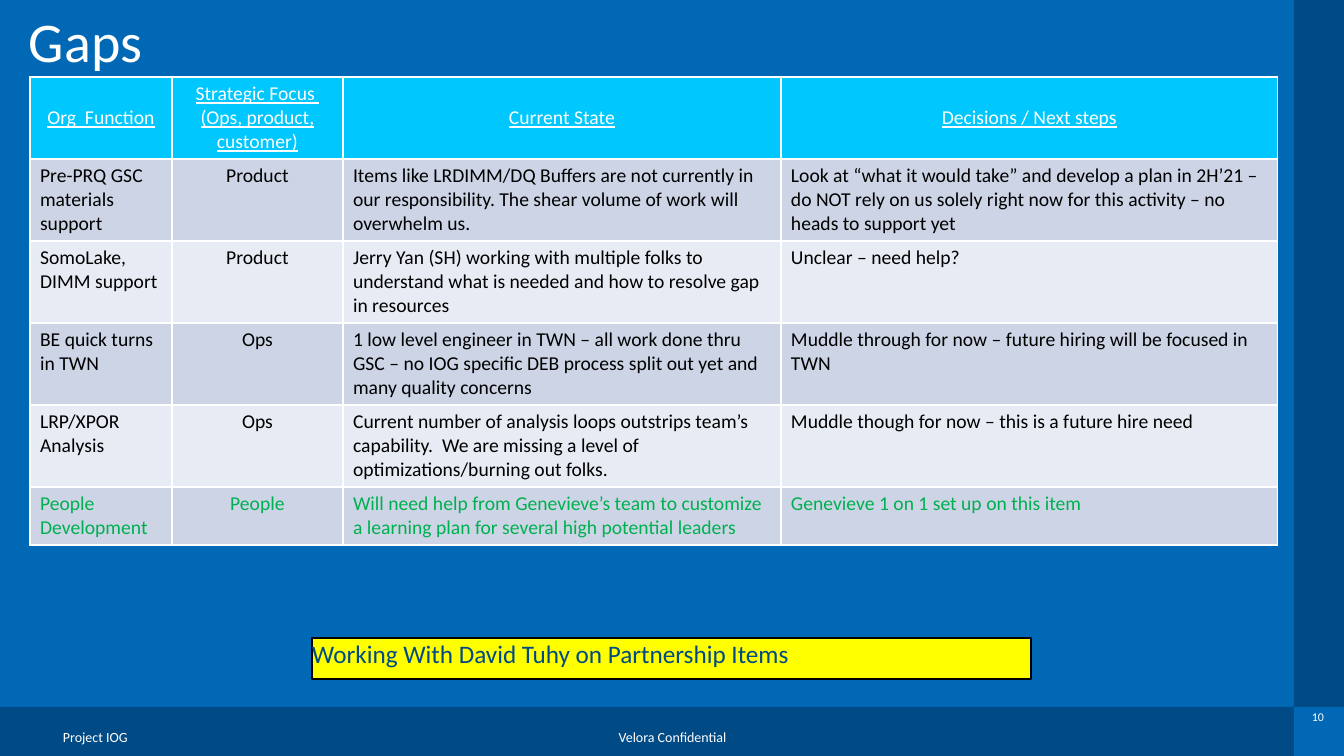
from lxml.etree import SubElement
from pptx import Presentation
from pptx.dml.color import RGBColor
from pptx.enum.shapes import MSO_SHAPE as Shape
from pptx.enum.text import MSO_ANCHOR as Anchor, PP_ALIGN as Align
from pptx.oxml.ns import qn
from pptx.util import Pt

PX = 12192000 / 1344
BLUE, NAVY, WHITE, BLACK, GREEN = "0068B5", "004A86", "FFFFFF", "000000", "00B050"


def color(code):
    return RGBColor.from_string(code)


def write(frame, words, size, ink, align=Align.LEFT, underline=None):
    line = frame.paragraphs[0]
    line.alignment = align
    run = line.add_run()
    run.text = words
    run.font.name = "Calibri"
    run.font.size = Pt(size)
    run.font.color.rgb = color(ink)
    run.font.underline = underline
    return line


deck = Presentation()
deck.slide_width, deck.slide_height = round(1344 * PX), round(756 * PX)
slide = deck.slides.add_slide(deck.slide_layouts[6])
slide.background.fill.solid()
slide.background.fill.fore_color.rgb = color(BLUE)

panels = [
    (0, 707, 1294, 49, NAVY),
    (1294, 707, 50, 49, BLUE),
    (1294, 0, 50, 707, NAVY),
    (312, 638, 719, 41, "FFFF00"),
]
for *box, tint in panels:
    panel = slide.shapes.add_shape(Shape.RECTANGLE, *[round(v * PX) for v in box])
    panel.shadow.inherit = False
    panel.fill.solid()
    panel.fill.fore_color.rgb = color(tint)
    panel.line.fill.background()

partnership = panel
partnership.line.color.rgb = color(BLACK)
partnership.line.width = Pt(1)

labels = [
    ("10", 1309, 692, 23, 51, 8.5, Align.LEFT, Anchor.MIDDLE, 3, True, 0.9),
    ("Velora Confidential", 599, 724, 147, 25, 10, Align.CENTER, Anchor.TOP, None, False, None),
    ("Project IOG", 53, 724, 94, 25, 10, Align.LEFT, Anchor.TOP, None, False, None),
    ("Gaps", 29, 14, 1215, 71, 40, Align.LEFT, Anchor.TOP, 0, True, 0.9),
]
frames = [(partnership.text_frame, 0, Anchor.TOP, True)]
write(partnership.text_frame, "Working With David Tuhy on Partnership Items", 18, NAVY)
for words, x, y, w, h, size, align, anchor, inset, wrap, spacing in labels:
    label = slide.shapes.add_textbox(*[round(v * PX) for v in (x, y, w, h)])
    write(label.text_frame, words, size, WHITE, align).line_spacing = spacing
    frames.append((label.text_frame, inset, anchor, wrap))

for frame, inset, anchor, wrap in frames:
    frame.word_wrap = wrap
    frame.vertical_anchor = anchor
    if inset is not None:
        frame.margin_left = frame.margin_right = round(inset * PX)
        frame.margin_top = frame.margin_bottom = round(inset * PX)

gaps = [
    ("Org  Function", "Strategic Focus  (Ops, product, customer)", "Current State",
     "Decisions / Next steps"),
    ("Pre-PRQ GSC materials support", "Product",
     "Items like LRDIMM/DQ Buffers are not currently in our responsibility. "
     "The shear volume of work will overwhelm us.",
     "Look at “what it would take” and develop a plan in 2H’21 – do NOT rely on us "
     "solely right now for this activity – no heads to support yet"),
    ("SomoLake, DIMM support", "Product",
     "Jerry Yan (SH) working with multiple folks to understand what is needed "
     "and how to resolve gap in resources",
     "Unclear – need help?"),
    ("BE quick turns in TWN", "Ops",
     "1 low level engineer in TWN – all work done thru GSC – no IOG specific DEB "
     "process split out yet and many quality concerns",
     "Muddle through for now – future hiring will be focused in TWN"),
    ("LRP/XPOR Analysis", "Ops",
     "Current number of analysis loops outstrips team’s capability.  We are missing "
     "a level of optimizations/burning out folks.",
     "Muddle though for now – this is a future hire need"),
    ("People Development", "People",
     "Will need help from Genevieve’s team to customize a learning plan for several "
     "high potential leaders",
     "Genevieve 1 on 1 set up on this item"),
]
widths = [142, 171, 438, 497]
heights = [82, 82, 82, 82, 82, 58]
bands = ["E7EBF3", "CCD4E5"]
inks = [WHITE] + [BLACK] * 4 + [GREEN]

grid = slide.shapes.add_table(
    len(gaps), len(widths),
    *[round(v * PX) for v in (30, 77, sum(widths), sum(heights))]).table
grid.horz_banding = False
for column, width in zip(grid.columns, widths):
    column.width = round(width * PX)

for r, gap in enumerate(gaps):
    grid.rows[r].height = round(heights[r] * PX)
    header = r == 0
    for c, words in enumerate(gap):
        cell = grid.cell(r, c)
        props = cell._tc.get_or_add_tcPr()
        for side in ("a:lnL", "a:lnR", "a:lnT", "a:lnB"):
            border = SubElement(props, qn(side), w=str(Pt(1)))
            SubElement(SubElement(border, qn("a:solidFill")), qn("a:srgbClr"), val=WHITE)
        cell.fill.solid()
        cell.fill.fore_color.rgb = color("00C7FD" if header else bands[r % 2])
        cell.vertical_anchor = Anchor.MIDDLE if header else Anchor.TOP
        align = Align.CENTER if header or c == 1 else Align.LEFT
        write(cell.text_frame, words, 14, inks[r], align, header).runs[0].font.bold = False

deck.save("out.pptx")
